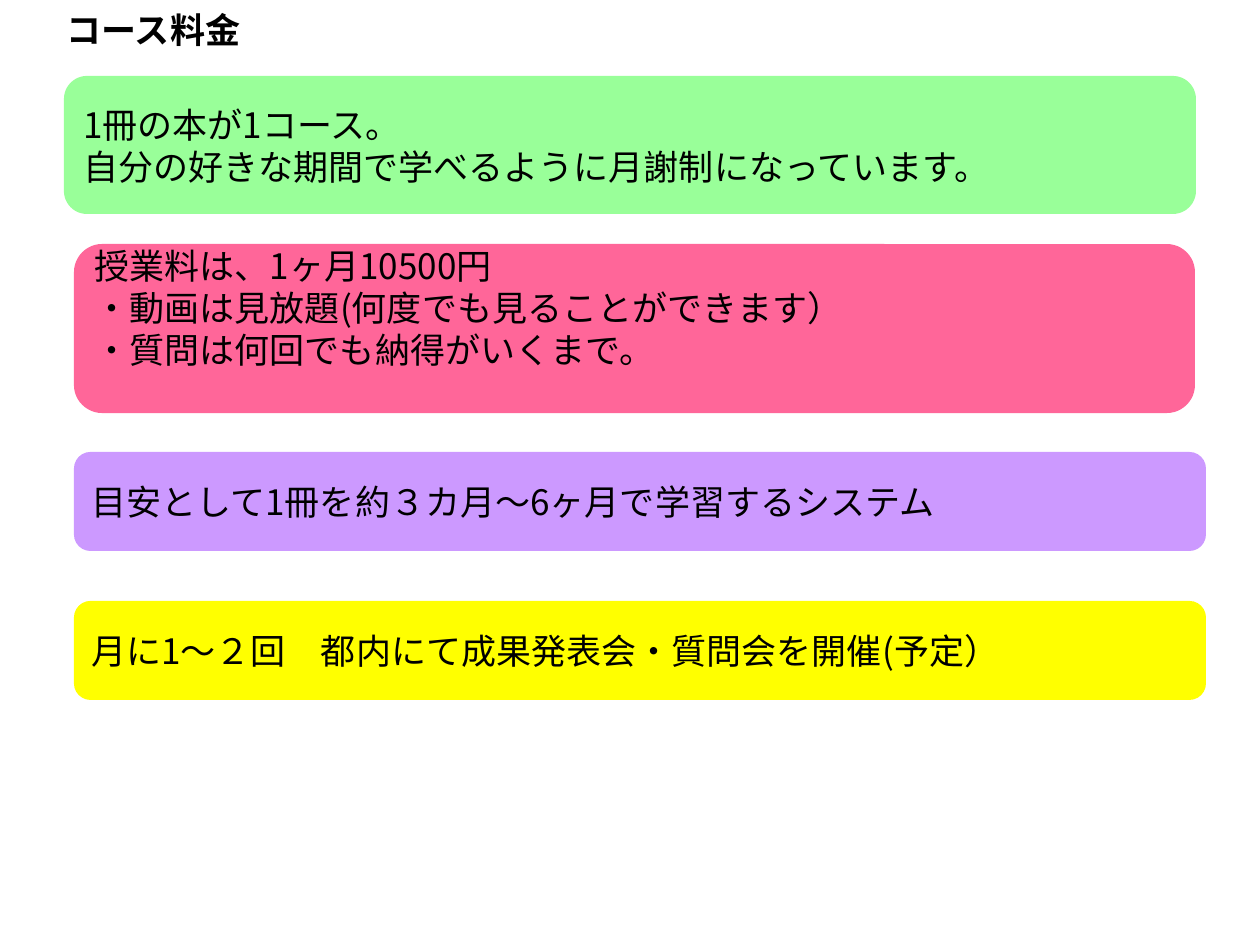
from dataclasses import dataclass

from lxml import etree
from pptx import Presentation
from pptx.dml.color import RGBColor
from pptx.enum.shapes import MSO_SHAPE
from pptx.enum.text import MSO_ANCHOR, MSO_AUTO_SIZE, PP_ALIGN
from pptx.oxml.ns import qn
from pptx.util import Emu, Pt

ROUNDED = MSO_SHAPE.ROUNDED_RECTANGLE
MIDDLE = MSO_ANCHOR.MIDDLE
LEFT = PP_ALIGN.LEFT
NO_AUTOFIT = MSO_AUTO_SIZE.NONE

PX_PER_INCH = 126
TITLE_ONLY = 5
TEXT_SIZE = 20
LINE_HEIGHT = 42
INSET = 6
TITLE_FONT = "Calibri"
BODY_FONT = "Noto Sans CJK JP"
COLOURS = {
    "text": "000000",
    "course": "99FF99",
    "fee": "FF6699",
    "duration": "CC99FF",
    "events": "FFFF00",
}


@dataclass(frozen=True)
class Panel:
    colour: str
    left: int
    top: int
    width: int
    height: int
    lines: tuple[str, ...]
    bottom_inset: int = INSET


PANELS = (
    Panel("course", 64, 76, 1132, 138, (
        "1冊の本が1コース。",
        "自分の好きな期間で学べるように月謝制になっています。",
    )),
    Panel("fee", 74, 244, 1121, 169, (
        "授業料は、1ヶ月10500円",
        "・動画は見放題(何度でも見ることができます）",
        "・質問は何回でも納得がいくまで。",
    ), INSET + LINE_HEIGHT),
    Panel("duration", 74, 452, 1132, 99, (
        "目安として1冊を約３カ月～6ヶ月で学習するシステム",
    )),
    Panel("events", 74, 601, 1132, 99, (
        "月に1～２回　都内にて成果発表会・質問会を開催(予定）",
    )),
)


def px(length: int) -> Emu:
    return Emu(round(length * 914400 / PX_PER_INCH))


def rgb(name: str) -> RGBColor:
    return RGBColor.from_string(COLOURS[name])


def write_text(box, text: str, font_name: str, bold: bool = False) -> None:
    frame = box.text_frame
    frame.text = text
    frame.word_wrap = True
    frame.auto_size = NO_AUTOFIT
    frame.vertical_anchor = MIDDLE
    for paragraph in frame.paragraphs:
        paragraph.alignment = LEFT
        for span in paragraph.runs:
            span.font.name = font_name
            span.font.size = Pt(TEXT_SIZE)
            span.font.bold = bold
            span.font.color.rgb = rgb("text")
            east_asian = etree.SubElement(span.font._element, qn("a:ea"))
            east_asian.set("typeface", BODY_FONT)


def draw_title(page, text: str) -> None:
    title = page.shapes.title
    title.left, title.top, title.width, title.height = map(px, (54, 0, 1134, 58))
    write_text(title, text, TITLE_FONT, bold=True)


def draw_panel(page, panel: Panel) -> None:
    box = page.shapes.add_shape(
        ROUNDED, px(panel.left), px(panel.top), px(panel.width), px(panel.height)
    )
    box.shadow.inherit = False
    box.fill.solid()
    box.fill.fore_color.rgb = rgb(panel.colour)
    box.line.fill.background()
    box.text_frame.margin_bottom = px(panel.bottom_inset)
    write_text(box, "\n".join(panel.lines), BODY_FONT)


def main() -> None:
    deck = Presentation()
    deck.slide_width = px(1260)
    deck.slide_height = px(945)
    page = deck.slides.add_slide(deck.slide_layouts[TITLE_ONLY])
    draw_title(page, "コース料金")
    for panel in PANELS:
        draw_panel(page, panel)
    deck.save("out.pptx")


if __name__ == "__main__":
    main()
